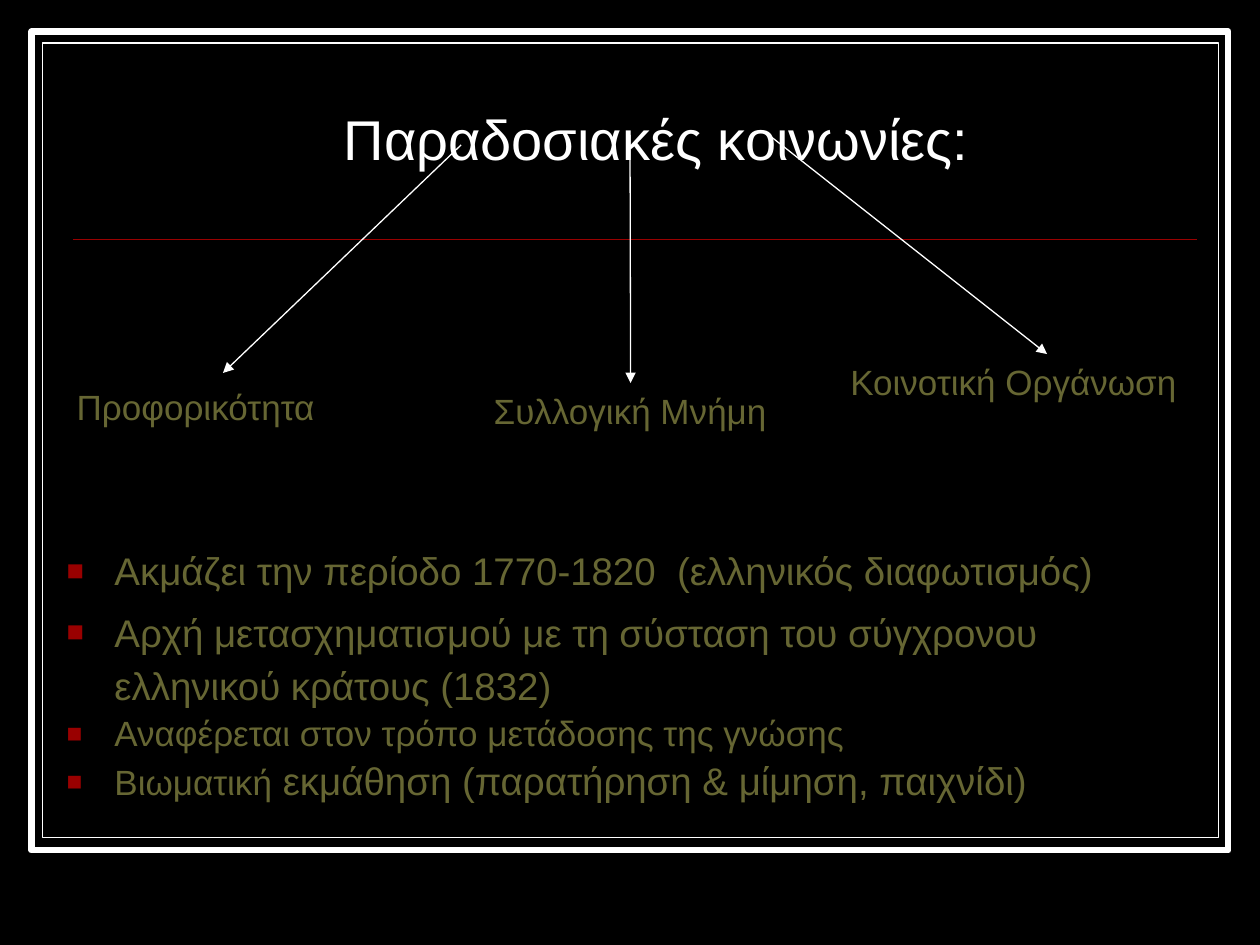
from lxml import etree
from pptx import Presentation
from pptx.dml.color import RGBColor
from pptx.enum.shapes import MSO_CONNECTOR, MSO_SHAPE
from pptx.enum.text import MSO_ANCHOR, PP_ALIGN
from pptx.oxml.ns import qn
from pptx.util import Inches, Pt

LINE, RECT = MSO_CONNECTOR.STRAIGHT, MSO_SHAPE.RECTANGLE
MIDDLE, CENTER = MSO_ANCHOR.MIDDLE, PP_ALIGN.CENTER
BLACK, WHITE, RED, OLIVE = "000000", "FFFFFF", "990000", "666633"

# Content
TITLE = "Παραδοσιακές κοινωνίες:"
FRAMES = [  # box, line width
    ((0.25, 0.25, 9.5, 6.5), 3.5),
    ((0.34, 0.34, 9.33, 6.31), 0.75),
]
TOPICS = [  # text, box, line spacing, space before, arrow start, arrow end
    ("Προφορικότητα", (0.51, 2.96, 2.18, 0.48), 1.15, 4, (3.66, 1.15), (1.77, 2.96)),
    ("Συλλογική Μνήμη", (3.82, 3.04, 2.37, 0.43), 1, 0, (5, 1.07), None),
    ("Κοινοτική Οργάνωση", (6.65, 2.81, 2.8, 0.43), 1, 0, (6.1, 1.07), (8.31, 2.81)),
]
POINTS = [  # line spacing, runs with their sizes
    (1.15, [("Ακμάζει την περίοδο 1770-1820  (ελληνικός διαφωτισμός)", 22)]),
    (1.15, [("Αρχή μετασχηματισμού με τη σύσταση του σύγχρονου "
             "ελληνικού κράτους (1832)", 22)]),
    (0.9, [("Αναφέρεται στον τρόπο μετάδοσης της γνώσης", 20)]),
    (0.9, [("Βιωματική", 20), (" εκμάθηση (παρατήρηση & μίμηση, παιχνίδι)", 22)]),
]


def color(code):
    return RGBColor.from_string(code)


def inches(nums):
    return [Inches(n) for n in nums]


def add_run(para, text, size, code):
    run = para.add_run()
    run.text = text
    run.font.name = "Arial"
    run.font.size = Pt(size)
    run.font.color.rgb = color(code)


def add_line(start, end, code, width):
    line = slide.shapes.add_connector(LINE, *inches(start + end))
    line.line.color.rgb = color(code)
    line.line.width = Pt(width)
    etree.SubElement(line._element.spPr, qn("a:effectLst"))
    return line


def add_bullet(para):
    props = para._p.get_or_add_pPr()
    props.set("marL", str(Inches(0.38)))
    props.set("indent", str(-Inches(0.38)))
    tint = etree.SubElement(props, qn("a:buClr"))
    etree.SubElement(tint, qn("a:srgbClr"), val=RED)
    etree.SubElement(props, qn("a:buSzPct"), val="75000")
    etree.SubElement(props, qn("a:buFont"), typeface="Arial")
    etree.SubElement(props, qn("a:buChar"), char="■")


prs = Presentation()
prs.slide_width, prs.slide_height = Inches(10), Inches(7.5)
slide = prs.slides.add_slide(prs.slide_layouts[5])
slide.background.fill.solid()
slide.background.fill.fore_color.rgb = color(BLACK)

# Double frame and rule
for box, width in FRAMES:
    frame = slide.shapes.add_shape(RECT, *inches(box))
    frame.shadow.inherit = False
    frame.fill.solid()
    frame.fill.fore_color.rgb = color(BLACK)
    frame.line.color.rgb = color(WHITE)
    frame.line.width = Pt(width)
add_line((0.58, 1.9), (9.5, 1.9), RED, 1)

# Title, moved in front of the frames
title = slide.shapes.title
slide.shapes._spTree.append(title._element)
title.left, title.top, title.width, title.height = inches((2.21, 0.8, 6, 0.6))
title.text_frame.vertical_anchor = MIDDLE
para = title.text_frame.paragraphs[0]
para.alignment = CENTER
add_run(para, TITLE, 32, WHITE)

# Topics with their arrows
for text, box, space, before, start, end in TOPICS:
    label = slide.shapes.add_textbox(*inches(box))
    label.text_frame.word_wrap = False
    para = label.text_frame.paragraphs[0]
    para.line_spacing, para.space_before = space, Pt(before)
    add_run(para, text, 20, OLIVE)
    arrow = add_line(start, end or start, WHITE, 0.75)
    if end is None:
        arrow.end_connect(label, 0)
    etree.SubElement(arrow.line._get_or_add_ln(), qn("a:tailEnd"), type="triangle")

# Bullet points
body = slide.shapes.add_textbox(*inches((0.43, 4.24, 9.29, 2.3))).text_frame
body.word_wrap = True
for i, (space, runs) in enumerate(POINTS):
    para = body.add_paragraph() if i else body.paragraphs[0]
    para.line_spacing, para.space_before = space, Pt(4.8)
    add_bullet(para)
    for text, size in runs:
        add_run(para, text, size, OLIVE)

prs.save("out.pptx")
